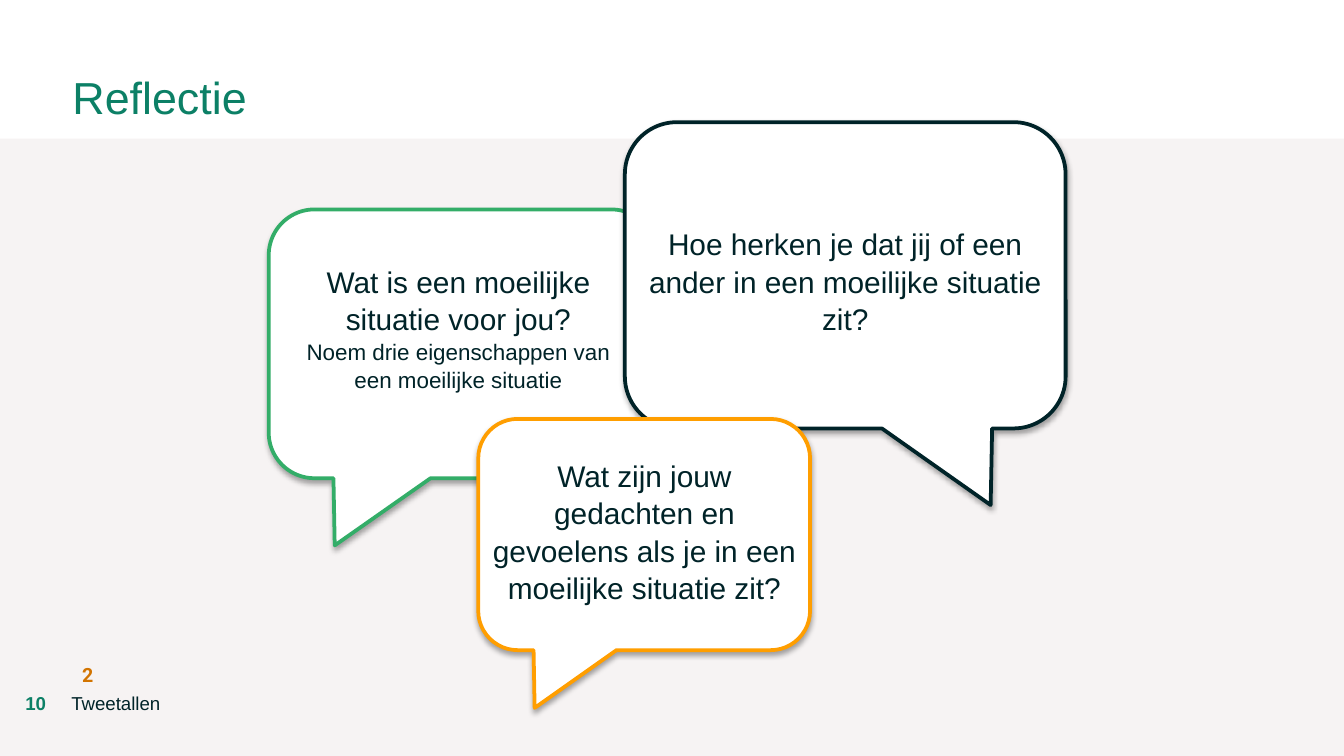
from dataclasses import dataclass

from lxml.etree import SubElement
from pptx import Presentation
from pptx.dml.color import RGBColor
from pptx.enum.shapes import MSO_SHAPE
from pptx.enum.text import MSO_ANCHOR, PP_ALIGN
from pptx.oxml.ns import qn
from pptx.shapes.autoshape import Shape
from pptx.util import Cm, Pt

WHITE = RGBColor(0xFF, 0xFF, 0xFF)
SAND = RGBColor(0xE3, 0xDA, 0xD8)
TEAL = RGBColor(0x0C, 0x80, 0x66)
INK = RGBColor(0x00, 0x23, 0x28)
GREEN = RGBColor(0x33, 0xAD, 0x68)
ORANGE = RGBColor(0xFF, 0x9E, 0x00)
AMBER = RGBColor(0xD2, 0x74, 0x00)
Box = tuple[float, float, float, float]


@dataclass(frozen=True)
class Line:
    text: str
    size: float
    color: RGBColor = INK
    bold: bool = False
    font: str = "Arial"


@dataclass(frozen=True)
class Label:
    box: Box
    lines: tuple[Line, ...]
    align: PP_ALIGN = PP_ALIGN.LEFT
    spacing: float = 1.0
    wrap: bool = True
    anchor: MSO_ANCHOR = MSO_ANCHOR.TOP


@dataclass(frozen=True)
class Bubble:
    box: Box
    tail_x: float
    color: RGBColor
    label: Label


def add_label(shapes, label: Label) -> None:
    tf = shapes.add_textbox(*map(Cm, label.box)).text_frame
    tf.word_wrap = label.wrap
    tf.vertical_anchor = label.anchor
    tf.margin_left = tf.margin_right = tf.margin_top = tf.margin_bottom = 0
    for i, line in enumerate(label.lines):
        p = tf.add_paragraph() if i else tf.paragraphs[0]
        p.alignment = label.align
        p.line_spacing = label.spacing
        r = p.add_run()
        r.text = line.text
        r.font.name = line.font
        r.font.size = Pt(line.size)
        r.font.bold = line.bold
        r.font.color.rgb = line.color


def add_shadow(sp: Shape) -> None:
    effects = sp._element.spPr.find(qn("a:effectLst"))
    shadow = SubElement(effects, qn("a:outerShdw"), blurRad=str(Pt(3.1)),
                        dist=str(Pt(1.8)), dir="5400000", algn="t", rotWithShape="0")
    color = SubElement(shadow, qn("a:srgbClr"), val="000000")
    SubElement(color, qn("a:alpha"), val="35000")


def add_bubble(shapes, bubble: Bubble) -> None:
    group = shapes.add_group_shape()
    sp = group.shapes.add_shape(MSO_SHAPE.ROUNDED_RECTANGULAR_CALLOUT, *map(Cm, bubble.box))
    sp.adjustments[0] = bubble.tail_x
    sp.adjustments[1] = 0.75
    sp.adjustments[2] = 0.17
    sp.shadow.inherit = False
    sp.fill.solid()
    sp.fill.fore_color.rgb = WHITE
    sp.line.color.rgb = bubble.color
    sp.line.width = Pt(2)
    add_shadow(sp)
    add_label(group.shapes, bubble.label)


def add_band(shapes, box: Box) -> None:
    sp = shapes.add_shape(MSO_SHAPE.RECTANGLE, *map(Cm, box))
    sp.shadow.inherit = False
    sp.line.fill.background()
    sp.fill.solid()
    sp.fill.fore_color.rgb = SAND
    color = sp._element.spPr.find(qn("a:solidFill"))[0]
    SubElement(color, qn("a:alpha"), val="30000")


def question(box: Box, *lines: Line) -> Label:
    return Label(box, lines, PP_ALIGN.CENTER, 1.05)


LABELS = (
    Label((0.23, 13.08, 0.89, 0.51), (Line("10", 10, TEAL, True),), PP_ALIGN.CENTER),
    Label((1.37, 1.27, 22.81, 1.63), (Line("Reflectie", 24, TEAL),), spacing=1.05),
    Label((1.35, 13.08, 10.64, 0.66), (Line("Tweetallen", 10),)),
)
BUBBLES = (
    Bubble((5.08, 3.96, 7.34, 5.08), -0.33, GREEN, question(
        (5.77, 4.95, 5.79, 1.73),
        Line("Wat is een moeilijke situatie voor jou?", 16),
        Line("Noem drie eigenschappen van een moeilijke situatie", 12))),
    Bubble((11.81, 2.31, 8.33, 5.79), 0.33, INK, question(
        (11.91, 4.24, 8.13, 2.13),
        Line("Hoe herken je dat jij of een ander in een moeilijke situatie zit?", 16))),
    Bubble((9.04, 7.92, 6.27, 4.37), -0.33, ORANGE, question(
        (9.17, 8.61, 6.02, 3.02),
        Line("Wat zijn jouw gedachten en gevoelens als je in een moeilijke situatie zit?", 16))),
)
PAIR_SIZE = Label((1.47, 12.4, 0.38, 0.71), (Line("2", 10.5, AMBER, True, "Roboto"),),
                  PP_ALIGN.CENTER, anchor=MSO_ANCHOR.MIDDLE)


def main() -> None:
    prs = Presentation()
    prs.slide_width, prs.slide_height = Cm(25.4), Cm(14.29)
    s = prs.slides.add_slide(prs.slide_layouts[6])
    add_band(s.shapes, (0, 2.62, 25.4, 11.67))
    for label in LABELS:
        add_label(s.shapes, label)
    for bubble in BUBBLES:
        add_bubble(s.shapes, bubble)
    add_label(s.shapes, PAIR_SIZE)
    prs.save("out.pptx")


if __name__ == "__main__":
    main()
